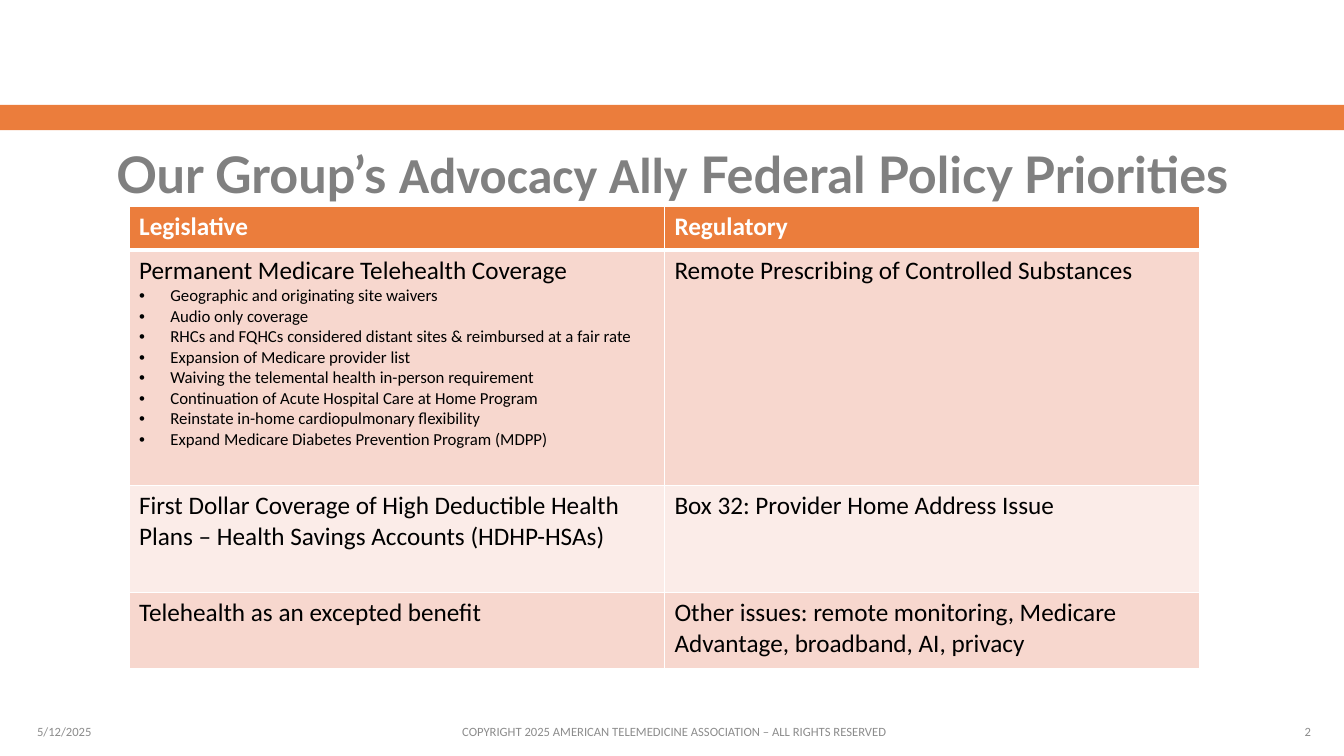
from dataclasses import dataclass

from lxml.etree import SubElement
from pptx import Presentation
from pptx.dml.color import RGBColor
from pptx.enum.shapes import MSO_SHAPE
from pptx.enum.text import MSO_ANCHOR, MSO_AUTO_SIZE, PP_ALIGN
from pptx.oxml import parse_xml
from pptx.oxml.ns import nsdecls, qn
from pptx.util import Inches, Pt


@dataclass(frozen=True)
class Theme:
    orange: str = "EB7D3C"
    dark: str = "F7D7CE"
    light: str = "FBECE8"
    white: str = "FFFFFF"
    black: str = "000000"
    gray: str = "808080"
    pale: str = "8C8C8C"
    head: str = "Lato"
    body: str = "Calibri"
    title: int = 36
    text: int = 18
    item: int = 12
    foot: int = 9


THEME = Theme()

TITLE = [
    ("Our Group’s ", THEME.head),
    ("Advocacy Ally", THEME.body),
    (" Federal Policy Priorities", THEME.head),
]

# Each cell is a list: a lead line, then any bullets
ROWS = [
    (["Legislative"], ["Regulatory"]),
    (
        [
            "Permanent Medicare Telehealth Coverage",
            "Geographic and originating site waivers",
            "Audio only coverage",
            "RHCs and FQHCs considered distant sites & reimbursed at a fair rate",
            "Expansion of Medicare provider list",
            "Waiving the telemental health in-person requirement",
            "Continuation of Acute Hospital Care at Home Program",
            "Reinstate in-home cardiopulmonary flexibility",
            "Expand Medicare Diabetes Prevention Program (MDPP)",
        ],
        ["Remote Prescribing of Controlled Substances"],
    ),
    (
        ["First Dollar Coverage of High Deductible Health Plans – "
         "Health Savings Accounts (HDHP-HSAs)"],
        ["Box 32: Provider Home Address Issue"],
    ),
    (
        ["Telehealth as an excepted benefit"],
        ["Other issues: remote monitoring, Medicare Advantage, broadband, AI, privacy"],
    ),
]
HEIGHTS = [0.43, 2.34, 1.06, 0.75]

FOOT = [
    ("5/12/2025", 3, PP_ALIGN.LEFT),
    ("COPYRIGHT 2025 AMERICAN TELEMEDICINE ASSOCIATION – ALL RIGHTS RESERVED",
     6.83, PP_ALIGN.CENTER),
    ("2", 3, PP_ALIGN.RIGHT),
]


def style(font, face, size, color, bold=False):
    font.name = face
    font.size = Pt(size)
    font.bold = bold
    font.color.rgb = RGBColor.from_string(color)


def add_bar(slide, left, top, width, height):
    bar = slide.shapes.add_shape(
        MSO_SHAPE.RECTANGLE, *map(Inches, (left, top, width, height)))
    bar.shadow.inherit = False
    bar.fill.solid()
    bar.fill.fore_color.rgb = RGBColor.from_string(THEME.orange)
    bar.line.fill.background()


def add_title(slide, left, top, width, height):
    title = slide.shapes.title
    title.left, title.top = Inches(left), Inches(top)
    title.width, title.height = Inches(width), Inches(height)
    frame = title.text_frame
    frame.word_wrap = True
    frame.auto_size = MSO_AUTO_SIZE.NONE
    frame.vertical_anchor = MSO_ANCHOR.BOTTOM
    para = frame.paragraphs[0]
    para.alignment = PP_ALIGN.CENTER
    para.line_spacing = 0.9
    for text, face in TITLE:
        run = para.add_run()
        run.text = text
        style(run.font, face, THEME.title, THEME.gray, True)


def add_bullet(para):
    props = para._p.get_or_add_pPr()
    props.set("marL", str(Inches(0.31)))
    props.set("indent", str(-Inches(0.31)))
    SubElement(props, qn("a:buFont")).set("typeface", "Arial")
    SubElement(props, qn("a:buChar")).set("char", "•")


def add_edges(cell, widths):
    props = cell._tc.get_or_add_tcPr()
    for spot, (side, width) in enumerate(widths.items()):
        props.insert(spot, parse_xml(
            f'<a:ln{side} {nsdecls("a")} w="{Pt(width)}"><a:solidFill>'
            f'<a:srgbClr val="{THEME.white}"/></a:solidFill></a:ln{side}>'))


def fill_cell(cell, lines, row):
    head = row == 0
    fill = THEME.orange if head else THEME.dark if row % 2 else THEME.light
    cell.fill.solid()
    cell.fill.fore_color.rgb = RGBColor.from_string(fill)
    add_edges(cell, {"L": 1, "R": 1, "T": 3 if row == 1 else 1, "B": 3 if head else 1})
    cell.text_frame.text = "\n".join(lines)
    for spot, para in enumerate(cell.text_frame.paragraphs):
        if spot:
            add_bullet(para)
        style(para.runs[0].font, THEME.body, THEME.item if spot else THEME.text,
              THEME.white if head else THEME.black, head)


def add_grid(slide, left, top, width):
    count = len(ROWS[0])
    table = slide.shapes.add_table(
        len(ROWS), count, Inches(left), Inches(top),
        Inches(width), Inches(sum(HEIGHTS))).table
    for col in table.columns:
        col.width = Inches(width / count)
    for row, cells in enumerate(ROWS):
        table.rows[row].height = Inches(HEIGHTS[row])
        for col, lines in enumerate(cells):
            fill_cell(table.cell(row, col), lines, row)


def add_foot(slide, left, top, height):
    for text, width, align in FOOT:
        box = slide.shapes.add_textbox(*map(Inches, (left, top, width, height)))
        frame = box.text_frame
        frame.word_wrap = True
        frame.vertical_anchor = MSO_ANCHOR.MIDDLE
        frame.text = text
        para = frame.paragraphs[0]
        para.alignment = align
        style(para.runs[0].font, THEME.body, THEME.foot, THEME.pale)
        left += width


def main():
    deck = Presentation()
    deck.slide_width, deck.slide_height = Inches(13.33), Inches(7.5)
    slide = deck.slides.add_slide(deck.slide_layouts.get_by_name("Title Only"))
    # Band and title
    add_bar(slide, 0, 1.04, 13.33, 0.25)
    add_title(slide, 0.93, 1.27, 11.48, 0.81)
    # Priorities table
    add_grid(slide, 1.28, 2.05, 10.62)
    # Date, copyright and page number
    add_foot(slide, 0.27, 7.06, 0.4)
    deck.save("out.pptx")


if __name__ == "__main__":
    main()
